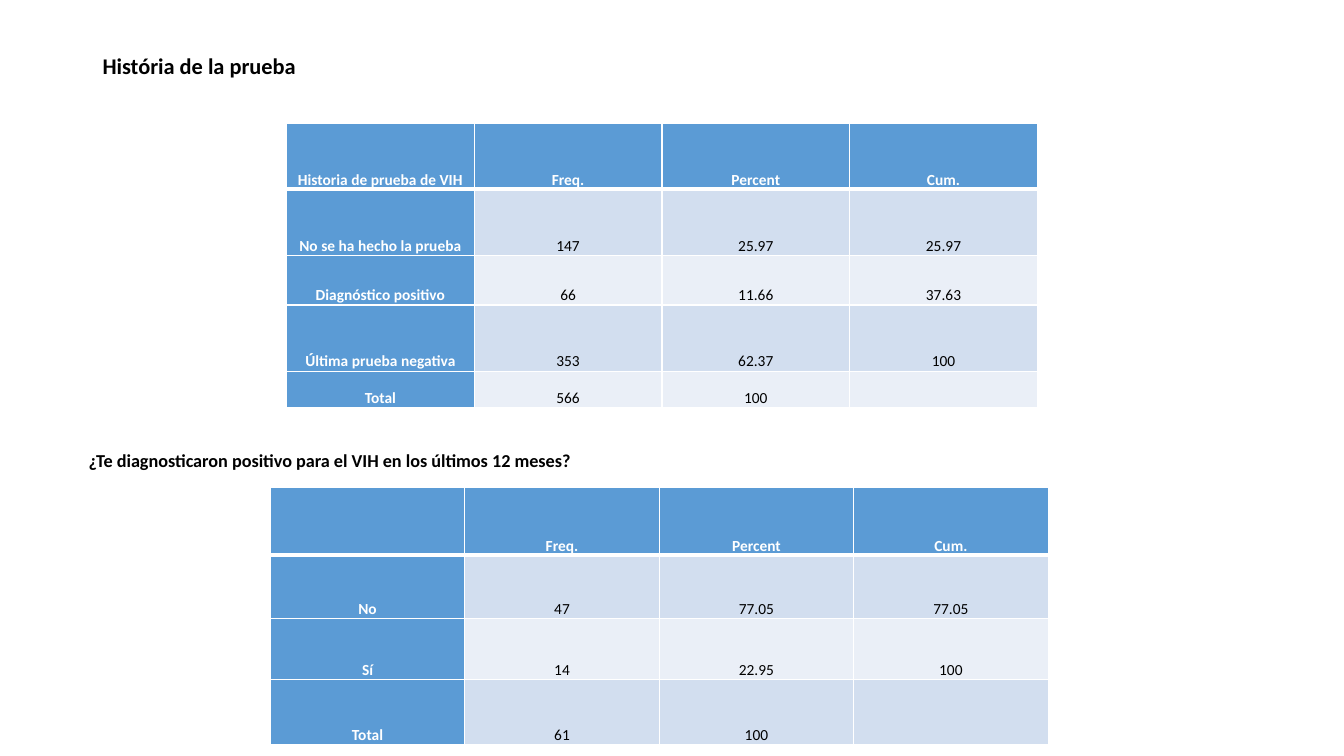
"""Build the HIV test history slide with two frequency tables."""
from lxml import etree
from pptx import Presentation
from pptx.dml.color import RGBColor
from pptx.enum import text
from pptx.oxml import ns
from pptx.util import Pt

HEADINGS = [
    {"text": "História de la prueba", "box": (66.2, 28.8, 828, 38.2),
     "size": 16, "bottom_inset": 3.6},
    {"text": "¿Te diagnosticaron positivo para el VIH en los últimos 12 meses?",
     "box": (56.2, 315.4, 828, 49), "size": 13, "bottom_inset": 23.6},
]
FREQUENCIES = [
    {"origin": (204.7, 87.9), "column_width": 134.1,
     "row_heights": (47.3, 47.3, 35.4, 47.3, 26.1),
     "rows": [
         ("Historia de prueba de VIH", "Freq.", "Percent", "Cum."),
         ("No se ha hecho la prueba", "147", "25.97", "25.97"),
         ("Diagnóstico positivo", "66", "11.66", "37.63"),
         ("Última prueba negativa", "353", "62.37", "100"),
         ("Total", "566", "100", ""),
     ]},
    {"origin": (193.1, 348.5), "column_width": 138.9,
     "row_heights": (48.2, 45.4, 43.2, 46.8),
     "rows": [
         ("", "Freq.", "Percent", "Cum."),
         ("No", "47", "77.05", "77.05"),
         ("Sí", "14", "22.95", "100"),
         ("Total", "61", "100", ""),
     ]},
]

FONT = "Calibri"
BLACK = RGBColor(0x00, 0x00, 0x00)
WHITE = RGBColor(0xFF, 0xFF, 0xFF)
BLUE = RGBColor(0x5B, 0x9B, 0xD5)
BANDS = (RGBColor(0xEA, 0xEF, 0xF7), RGBColor(0xD2, 0xDE, 0xEF))


def style_font(font, size, color, bold):
    font.name = FONT
    font.size = Pt(size)
    font.bold = bold
    font.color.rgb = color


def add_heading(slide, heading):
    box = slide.shapes.add_textbox(*map(Pt, heading["box"]))
    frame = box.text_frame
    frame.word_wrap = True
    frame.vertical_anchor = text.MSO_ANCHOR.MIDDLE
    frame.margin_bottom = Pt(heading["bottom_inset"])
    frame.text = heading["text"]
    paragraph = frame.paragraphs[0]
    paragraph.line_spacing = 0.9
    style_font(paragraph.runs[0].font, heading["size"], BLACK, True)


def add_borders(cell, widths):
    properties = cell._tc.get_or_add_tcPr()
    for position, (side, width) in enumerate(widths.items()):
        line = etree.Element(ns.qn(f"a:ln{side}"), w=str(Pt(width)))
        fill = etree.SubElement(line, ns.qn("a:solidFill"))
        etree.SubElement(fill, ns.qn("a:srgbClr"), val=str(WHITE))
        properties.insert(position, line)


def fill_cell(cell, content, row, column):
    is_label = row == 0 or column == 0
    cell.fill.solid()
    cell.fill.fore_color.rgb = BLUE if is_label else BANDS[row % 2]
    cell.vertical_anchor = text.MSO_ANCHOR.BOTTOM
    cell.margin_left = cell.margin_right = Pt(3.6)
    cell.margin_top = cell.margin_bottom = Pt(0)
    add_borders(cell, {"L": 1, "R": 1, "T": 3 if row == 1 else 1,
                       "B": 3 if row == 0 else 1})
    if content:
        cell.text_frame.text = content
        paragraph = cell.text_frame.paragraphs[0]
        paragraph.alignment = text.PP_ALIGN.CENTER
        paragraph.line_spacing = 1.15
        style_font(paragraph.runs[0].font, 11, WHITE if is_label else BLACK, is_label)


def add_frequencies(slide, frequencies):
    rows, heights = frequencies["rows"], frequencies["row_heights"]
    left, top = frequencies["origin"]
    width = frequencies["column_width"]
    columns = len(rows[0])
    table = slide.shapes.add_table(
        len(rows), columns, Pt(left), Pt(top), Pt(width * columns), Pt(sum(heights))).table
    for table_column in table.columns:
        table_column.width = Pt(width)
    for row, (contents, height) in enumerate(zip(rows, heights)):
        table.rows[row].height = Pt(height)
        for column, content in enumerate(contents):
            fill_cell(table.cell(row, column), content, row, column)


def main():
    deck = Presentation()
    deck.slide_width, deck.slide_height = Pt(960), Pt(540)
    slide = deck.slides.add_slide(deck.slide_layouts[6])
    for heading, frequencies in zip(HEADINGS, FREQUENCIES):
        add_heading(slide, heading)
        add_frequencies(slide, frequencies)
    deck.save("out.pptx")


if __name__ == "__main__":
    main()
